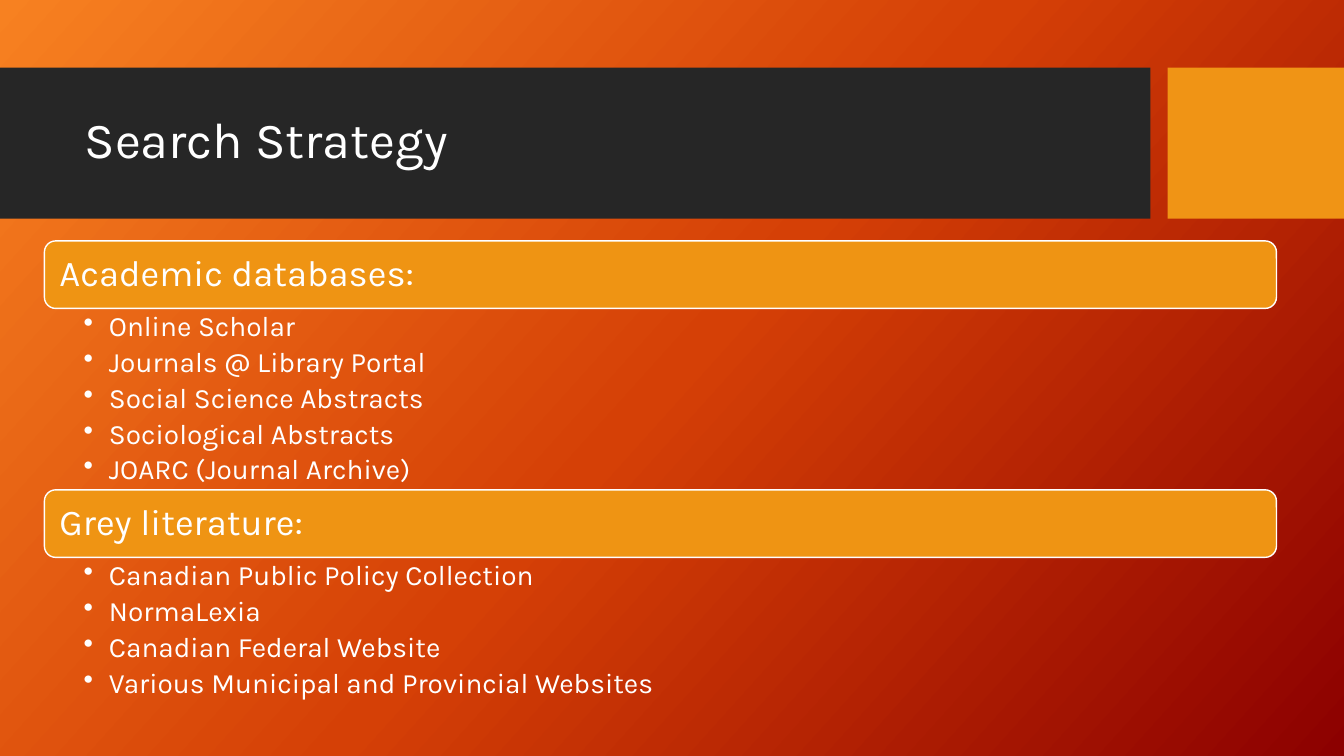
from lxml.etree import SubElement
from pptx import Presentation
from pptx.dml.color import RGBColor
from pptx.enum.shapes import MSO_SHAPE
from pptx.enum.text import MSO_ANCHOR
from pptx.oxml.ns import qn
from pptx.util import Inches, Pt

WIDE, HIGH = 13.33, 7.5
EDGE, SPAN = 0.44, 12.22   # left side and width of the list column
BAR, PAD = 0.67, 0.04      # heading bar height, inset of its text
WHITE = "FFFFFF"


def block(kind, box, fill, line=None):
    """Add a flat filled shape; box is left, top, width, height in inches."""
    item = slide.shapes.add_shape(kind, *map(Inches, box))
    item.shadow.inherit = False
    item.fill.solid()
    item.fill.fore_color.rgb = RGBColor.from_string(fill)
    if line:
        item.line.color.rgb = RGBColor.from_string(line)
        item.line.width = Pt(1)
    else:
        item.line.fill.background()
    return item


def text(lines, box, size, inset, anchor=MSO_ANCHOR.MIDDLE, bullet=None):
    """Add a text box, one paragraph a line; inset is left, top, right, bottom."""
    frame = slide.shapes.add_textbox(*map(Inches, box)).text_frame
    frame.word_wrap = True
    frame.vertical_anchor = anchor
    (frame.margin_left, frame.margin_top,
     frame.margin_right, frame.margin_bottom) = map(Inches, inset)
    for n, line in enumerate(lines):
        para = frame.paragraphs[0] if n == 0 else frame.add_paragraph()
        if bullet:
            para.level = 1
            props = para._p.get_or_add_pPr()
            props.set("marL", str(Inches(0.25)))
            props.set("indent", str(Inches(-0.25)))
            tint = SubElement(props, qn("a:buClr"))
            SubElement(tint, qn("a:srgbClr"), val=WHITE)
            SubElement(props, qn("a:buChar"), char=bullet)
            if n:
                para.space_before = Pt(4)
        para.line_spacing = 0.9
        run = para.add_run()
        run.text = line
        run.font.name = "Karla"
        run.font.size = Pt(size)
        run.font.color.rgb = RGBColor.from_string(WHITE)


deck = Presentation()
deck.slide_width, deck.slide_height = Inches(WIDE), Inches(HIGH)
slide = deck.slides.add_slide(deck.slide_layouts[6])

# Background gradient
back = slide.background.fill
back.gradient()
back.gradient_angle = 360 - 42
stops = slide.element.find(".//" + qn("a:gsLst"))
stops.clear()
for share, shade in (0, "F78121"), (50, "D54006"), (100, "8C0000"):
    stop = SubElement(stops, qn("a:gs"), pos=str(share * 1000))
    SubElement(stop, qn("a:srgbClr"), val=shade)

# Title band
for left, width, shade in (0, 11.41, "262626"), (11.58, 1.75, "F09415"):
    block(MSO_SHAPE.RECTANGLE, (left, 0.67, width, 1.5), shade)
text(["Search Strategy"], (0.74, 0.82, 10.51, 1.18), 36, (0.1, 0.05, 0.1, 0.05))

# Source lists: each heading bar follows the list above it
groups = {
    "Academic databases:": [
        "Online Scholar", "Journals @ Library Portal",
        "Social Science Abstracts", "Sociological Abstracts",
        "JOARC (Journal Archive)"],
    "Grey literature:": [
        "Canadian Public Policy Collection", "NormaLexia",
        "Canadian Federal Website",
        "Various Municipal and Provincial Websites"],
}
top = 2.39
for head, names in groups.items():
    tall = 0.36 * len(names)
    bar = block(MSO_SHAPE.ROUNDED_RECTANGLE, (EDGE, top, SPAN, BAR),
                "EF9413", WHITE)
    bar.adjustments[0] = 0.167
    text([head], (EDGE + PAD, top + PAD, SPAN - 2 * PAD, BAR - 2 * PAD),
         26, [0.11] * 4)
    text(names, (EDGE, top + BAR, SPAN, tall), 20, (0.39, PAD, 0.2, PAD),
         anchor=MSO_ANCHOR.TOP, bullet="•")
    top += BAR + tall

deck.save("out.pptx")
